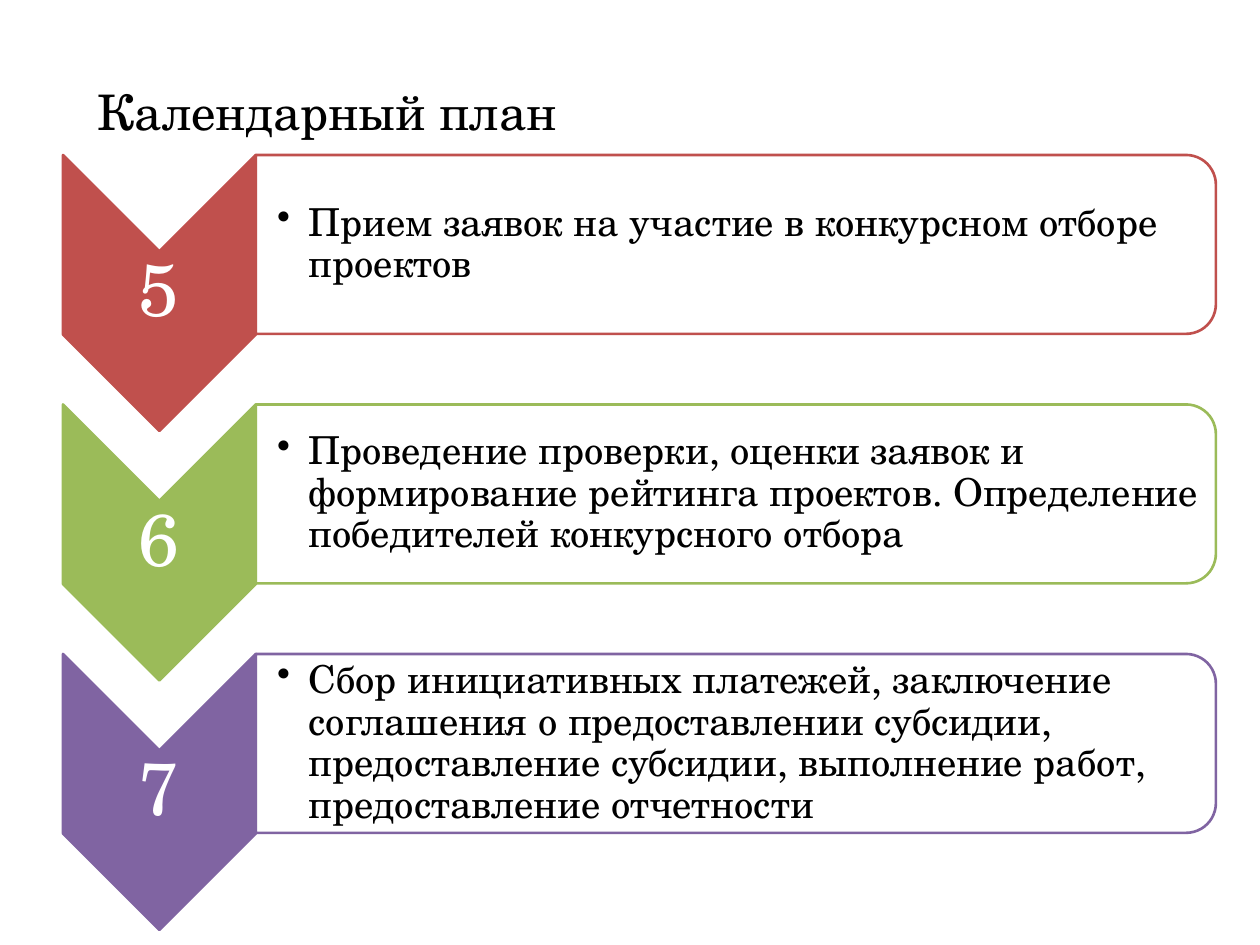
"""Builds the calendar plan slide with three numbered steps."""
from pptx import Presentation
from pptx.dml.color import RGBColor
from pptx.enum.shapes import MSO_SHAPE as Shape
from pptx.enum.text import MSO_ANCHOR as Anchor, PP_ALIGN as Align
from pptx.oxml.ns import qn
from pptx.util import Inches, Pt
from lxml.etree import SubElement

FONT = "TeX Gyre Schola"
COLORS = {"red": "C0504D", "green": "9BBB59", "purple": "8064A2",
          "black": "000000", "white": "FFFFFF"}
TITLE = "Календарный план"
STEPS = [
    ("5", "red", "Прием заявок на участие в конкурсном отборе проектов"),
    ("6", "green", "Проведение проверки, оценки заявок и формирование рейтинга "
     "проектов. Определение победителей конкурсного отбора"),
    ("7", "purple", "Сбор инициативных платежей, заключение соглашения о "
     "предоставлении субсидии, предоставление субсидии, выполнение работ, "
     "предоставление отчетности"),
]
TOP, STEP = 1.23, 1.98
LEFT, ARROW_W, ARROW_H = 0.5, 1.53, 2.19
CARD_W, CARD_H = 7.62, 1.42


def rgb(name):
    """Return the named colour."""
    return RGBColor.from_string(COLORS[name])


def write(frame, text, size, color="black", align=Align.LEFT,
          anchor=Anchor.MIDDLE, pads=(0.1, 0.05, 0.1, 0.05),
          space=0.9, bullet=False):
    """Set the text of a frame and its format."""
    frame.word_wrap = True
    frame.vertical_anchor = anchor
    (frame.margin_left, frame.margin_top,
     frame.margin_right, frame.margin_bottom) = map(Inches, pads)
    para = frame.paragraphs[0]
    para.text = text
    para.alignment = align
    para.line_spacing = space
    if bullet:
        props = para._p.get_or_add_pPr()
        props.set("marL", str(Inches(0.25)))
        props.set("indent", str(-Inches(0.25)))
        SubElement(props, qn("a:buChar")).set("char", "•")
    font = para.runs[0].font
    font.name, font.size, font.color.rgb = FONT, Pt(size), rgb(color)


def turned(slide, kind, left, top, wide, high, fill, line, alpha=None):
    """Add a shape turned by 90 degrees that covers the given area."""
    shape = slide.shapes.add_shape(
        kind, Inches(left + (wide - high) / 2), Inches(top + (high - wide) / 2),
        Inches(high), Inches(wide))
    shape.rotation = 90
    shape.shadow.inherit = False
    shape.fill.solid()
    shape.fill.fore_color.rgb = rgb(fill)
    shape.line.color.rgb = rgb(line)
    shape.line.width = Pt(1.5)
    if alpha:
        tone = shape.fill._xPr.find(".//" + qn("a:srgbClr"))
        SubElement(tone, qn("a:alpha")).set("val", str(alpha * 1000))


def label(slide, left, top, wide, high, text, size, **style):
    """Add a text box."""
    box = slide.shapes.add_textbox(*map(Inches, (left, top, wide, high)))
    write(box.text_frame, text, size, **style)


def main():
    """Build and save the slide."""
    deck = Presentation()
    deck.slide_width, deck.slide_height = Inches(10), Inches(7.5)
    slide = deck.slides.add_slide(deck.slide_layouts[5])
    title = slide.shapes.title
    title.left, title.top, title.width, title.height = map(
        Inches, (0.67, 0.6, 9, 0.78))
    write(title.text_frame, TITLE, 28, anchor=Anchor.TOP, space=1)

    right = LEFT + ARROW_W
    for i, (num, color, text) in enumerate(STEPS):
        top = TOP + i * STEP
        turned(slide, Shape.CHEVRON, LEFT, top, ARROW_W, ARROW_H, color, color)
        label(slide, LEFT, top + ARROW_W / 2, ARROW_W, ARROW_H - ARROW_W,
              num, 42, color="white", align=Align.CENTER, pads=(0.03,) * 4)
        turned(slide, Shape.ROUND_2_SAME_RECTANGLE, right, top, CARD_W, CARD_H,
               "white", color, alpha=90)
        label(slide, right, top + 0.07, CARD_W - 0.07, CARD_H - 0.14,
              text, 22, pads=(0.17, 0.02, 0.02, 0.02), bullet=True)
    deck.save("out.pptx")


if __name__ == "__main__":
    main()
